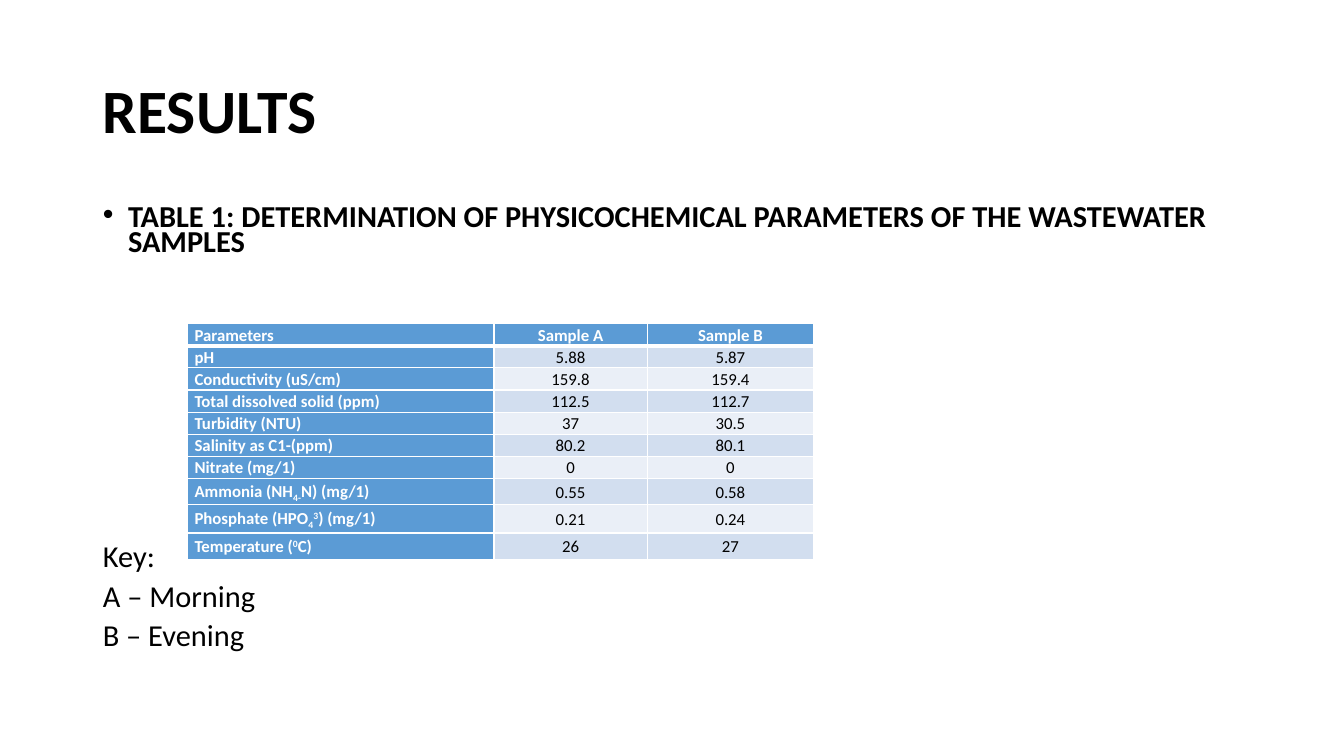
import pptx
import pptx.util
import pptx.dml.color
import pptx.enum.text
import pptx.oxml
import pptx.oxml.ns

TITLE = "RESULTS"
CAPTION = "TABLE 1: DETERMINATION OF PHYSICOCHEMICAL PARAMETERS OF THE WASTEWATER SAMPLES"
KEY_LINES = ["Key:", "A – Morning", "B – Evening"]
SUB, NORMAL, SUPER = -25000, 0, 30000
ROWS = [
    ("Parameters", "Sample A", "Sample B"),
    ("pH", "5.88", "5.87"),
    ("Conductivity (uS/cm)", "159.8", "159.4"),
    ("Total dissolved solid (ppm)", "112.5", "112.7"),
    ("Turbidity (NTU)", "37", "30.5"),
    ("Salinity as C1-(ppm)", "80.2", "80.1"),
    ("Nitrate (mg/1)", "0", "0"),
    ([("Ammonia (NH", NORMAL), ("4-", SUB), ("N) (mg/1)", NORMAL)], "0.55", "0.58"),
    ([("Phosphate (HPO", NORMAL), ("4", SUB), ("3", SUPER), (") (mg/1)", NORMAL)], "0.21", "0.24"),
    ([("Temperature (", NORMAL), ("0", SUPER), ("C)", NORMAL)], "26", "27"),
]
COLUMN_WIDTHS = [3.04, 1.52, 1.65]
ROW_HEIGHTS = [0.22] * 7 + [0.26, 0.28, 0.26]

WIDTH, HEIGHT = 13.33, 7.5
MARGIN = 0.92
CONTENT_WIDTH = WIDTH - 2 * MARGIN
TABLE_LEFT, TABLE_TOP = 1.86, 3.21
INDENT = 0.25
BODY_SIZE, BODY_GAP, KEY_GAP = 21.7, 10, 207
FONT = "Calibri"
BLACK = pptx.dml.color.RGBColor(0, 0, 0)
WHITE = pptx.dml.color.RGBColor(255, 255, 255)
BLUE = pptx.dml.color.RGBColor(0x5B, 0x9B, 0xD5)
BANDS = [pptx.dml.color.RGBColor(0xEA, 0xEF, 0xF7), pptx.dml.color.RGBColor(0xD2, 0xDE, 0xEF)]
LEFT = pptx.enum.text.PP_ALIGN.LEFT
CENTER = pptx.enum.text.PP_ALIGN.CENTER
MIDDLE = pptx.enum.text.MSO_ANCHOR.MIDDLE
TOP = pptx.enum.text.MSO_ANCHOR.TOP


def format_paragraph(paragraph, size, color, bold, spacing, align=LEFT, before=0):
    paragraph.alignment = align
    paragraph.line_spacing = spacing
    paragraph.space_before = pptx.util.Pt(before)
    for run in paragraph.runs:
        run.font.name = FONT
        run.font.size = pptx.util.Pt(size)
        run.font.bold = bold
        run.font.color.rgb = color


def place(placeholder, top, height, anchor):
    placeholder.left, placeholder.top = pptx.util.Inches(MARGIN), pptx.util.Inches(top)
    placeholder.width, placeholder.height = pptx.util.Inches(CONTENT_WIDTH), pptx.util.Inches(height)
    placeholder.text_frame.auto_size = pptx.enum.text.MSO_AUTO_SIZE.NONE
    placeholder.text_frame.vertical_anchor = anchor


def set_indent(paragraph, bulleted):
    properties = paragraph._p.get_or_add_pPr()
    indent = pptx.util.Inches(INDENT) if bulleted else 0
    properties.set("marL", str(indent))
    properties.set("indent", str(-indent))
    bullet = '<a:buChar %s char="•"/>' if bulleted else "<a:buNone %s/>"
    properties.append(pptx.oxml.parse_xml(bullet % pptx.oxml.ns.nsdecls("a")))


def set_borders(cell, row):
    properties = cell._tc.get_or_add_tcPr()
    for side in "LRTB":
        thick = (row, side) in [(0, "B"), (1, "T")]
        properties.append(pptx.oxml.parse_xml(
            f'<a:ln{side} {pptx.oxml.ns.nsdecls("a")} w="{pptx.util.Pt(3 if thick else 1)}">'
            f'<a:solidFill><a:srgbClr val="{WHITE}"/></a:solidFill></a:ln{side}>'))


def fill_cell(cell, content, row, column):
    heading = row == 0 or column == 0
    cell.margin_left = cell.margin_right = pptx.util.Inches(0.07)
    cell.margin_top = cell.margin_bottom = 0
    cell.vertical_anchor = MIDDLE
    set_borders(cell, row)
    cell.fill.solid()
    cell.fill.fore_color.rgb = BLUE if heading else BANDS[row % 2]
    paragraph = cell.text_frame.paragraphs[0]
    if isinstance(content, str):
        paragraph.text = content
    else:
        for text, baseline in content:
            run = paragraph.add_run()
            run.text = text
            if baseline:
                run._r.get_or_add_rPr().set("baseline", str(baseline))
    format_paragraph(paragraph, 12, WHITE if heading else BLACK, heading, 1.07,
                     CENTER if column else LEFT)


def add_results_table(slide):
    table = slide.shapes.add_table(
        len(ROWS), len(COLUMN_WIDTHS),
        pptx.util.Inches(TABLE_LEFT), pptx.util.Inches(TABLE_TOP),
        pptx.util.Inches(sum(COLUMN_WIDTHS)), pptx.util.Inches(sum(ROW_HEIGHTS))).table
    for column, width in zip(table.columns, COLUMN_WIDTHS):
        column.width = pptx.util.Inches(width)
    for row, height in zip(table.rows, ROW_HEIGHTS):
        row.height = pptx.util.Inches(height)
    for row, contents in enumerate(ROWS):
        for column, content in enumerate(contents):
            fill_cell(table.cell(row, column), content, row, column)


def main():
    presentation = pptx.Presentation()
    presentation.slide_width = pptx.util.Inches(WIDTH)
    presentation.slide_height = pptx.util.Inches(HEIGHT)
    slide = presentation.slides.add_slide(presentation.slide_layouts[1])

    title, body = slide.shapes.title, slide.placeholders[1]
    place(title, 0.4, 1.45, MIDDLE)
    title.text_frame.text = TITLE
    format_paragraph(title.text_frame.paragraphs[0], 44, BLACK, True, 0.9)

    place(body, 2, 4.76, TOP)
    body.text_frame.text = "\n".join([CAPTION] + KEY_LINES)
    for index, paragraph in enumerate(body.text_frame.paragraphs):
        caption = index == 0
        format_paragraph(paragraph, BODY_SIZE, BLACK, caption, 0.7,
                         before=KEY_GAP if index == 1 else BODY_GAP)
        set_indent(paragraph, caption)

    add_results_table(slide)
    presentation.save("out.pptx")


if __name__ == "__main__":
    main()
